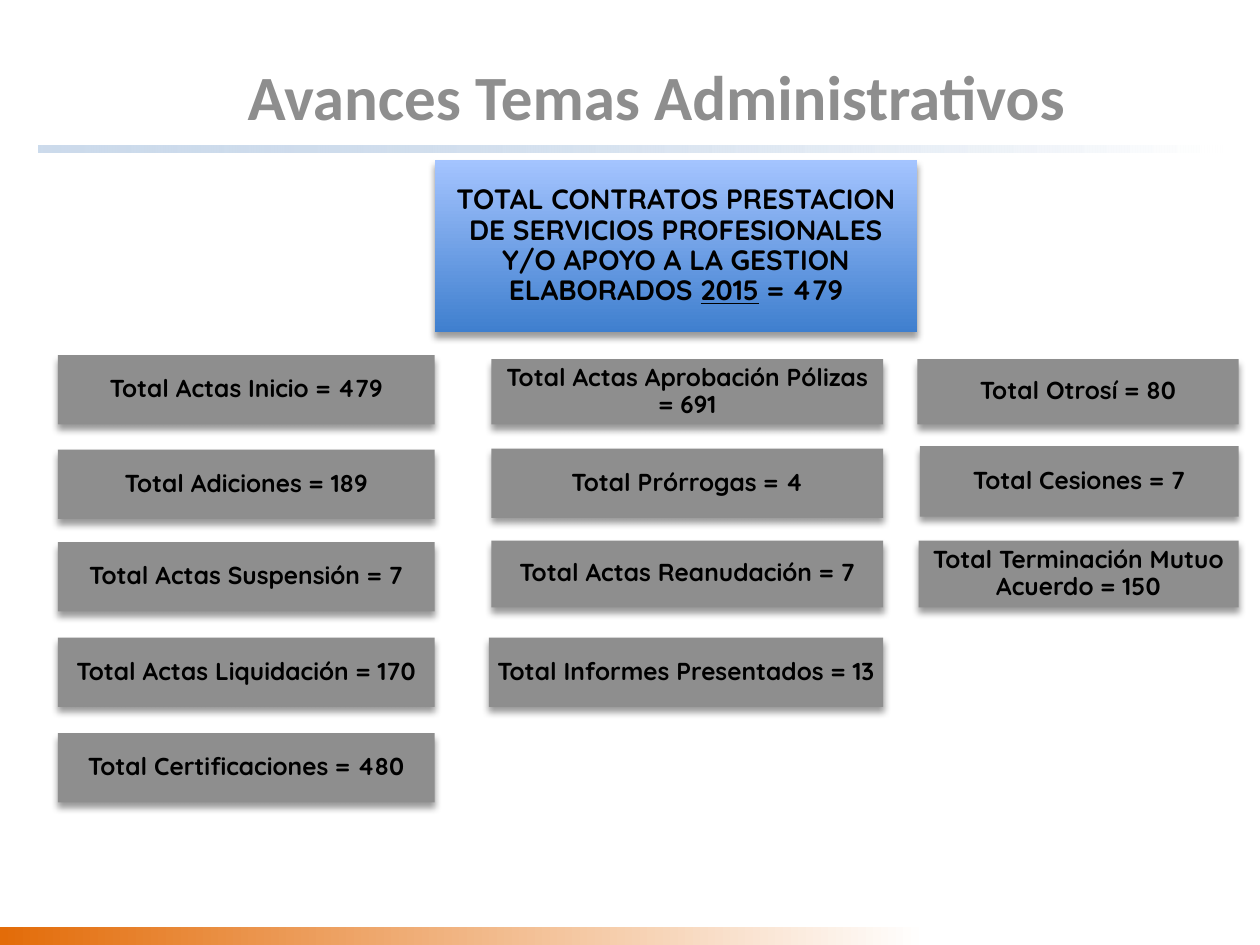
import pptx
import pptx.dml.color
import pptx.enum.shapes
import pptx.enum.text
import pptx.oxml
import pptx.oxml.ns
import pptx.util

Pt = pptx.util.Pt
RGB = pptx.dml.color.RGBColor.from_string

COLORS = {
    "title": "8E8E8E",
    "box": "8E8E8E",
    "text": "000000",
    "total_bottom": "3F7FCE",
    "total_top": "A4C4FF",
    "rule": "9AB7D9",
    "footer": "E36C09",
    "fade": "FFFFFF",
}

# Each column: right edge, then (label, left, top, height) for its boxes
COLUMNS = [
    (248.4, [
        ("Total Actas Inicio = 479", 33.1, 203, 39.6),
        ("Total Adiciones = 189", 33.1, 257, 39.6),
        ("Total Actas Suspensión = 7", 33.1, 309.8, 39.6),
        ("Total Actas Liquidación = 170", 33.1, 364.3, 39.6),
        ("Total Certificaciones = 480", 33.1, 419, 39.6),
    ]),
    (504.7, [
        ("Total Actas Aprobación Pólizas = 691", 280.8, 205.2, 37.4),
        ("Total Prórrogas = 4", 280.8, 256.3, 39.6),
        ("Total Actas Reanudación = 7", 280.8, 308.9, 38.2),
        ("Total Informes Presentados = 13", 279.4, 364.3, 39.6),
    ]),
    (707.8, [
        ("Total Otrosí = 80", 524.2, 205.2, 37.4),
        ("Total Cesiones = 7", 525.6, 254.9, 40.3),
        ("Total Terminación Mutuo Acuerdo = 150", 524.9, 308.9, 38.2),
    ]),
]


def add_rect(slide, left, top, width, height):
    rect = slide.shapes.add_shape(
        pptx.enum.shapes.MSO_SHAPE.RECTANGLE, Pt(left), Pt(top), Pt(width), Pt(height))
    rect.shadow.inherit = False
    rect.line.fill.background()
    return rect


def fill_gradient(rect, start, end, angle=0, start_alpha=None):
    rect.fill.gradient()
    rect.fill.gradient_angle = angle
    for stop, color in zip(rect.fill.gradient_stops, (start, end)):
        stop.color.rgb = RGB(COLORS[color])
    if start_alpha is not None:
        first_color = rect._element.spPr.find(".//" + pptx.oxml.ns.qn("a:srgbClr"))
        alpha = pptx.oxml.parse_xml(
            f'<a:alpha {pptx.oxml.ns.nsdecls("a")} val="{start_alpha * 1000}"/>')
        first_color.append(alpha)


def add_shadow(rect):
    effects = rect._element.spPr.find(pptx.oxml.ns.qn("a:effectLst"))
    effects.append(pptx.oxml.parse_xml(
        f'<a:outerShdw {pptx.oxml.ns.nsdecls("a")} blurRad="{Pt(4)}" dist="{Pt(3)}" '
        'dir="5400000" rotWithShape="0"><a:srgbClr val="000000">'
        '<a:alpha val="40000"/></a:srgbClr></a:outerShdw>'))


def write(paragraph, text, *, size, color="text", font="Quicksand", underline=None):
    paragraph.alignment = pptx.enum.text.PP_ALIGN.CENTER
    run = paragraph.add_run()
    run.text = text
    run.font.name = font
    run.font.size = Pt(size)
    run.font.bold = True
    run.font.underline = underline
    run.font.color.rgb = RGB(COLORS[color])


def add_box(slide, left, top, width, height):
    """Add a shadowed box and return it with its paragraph."""
    box = add_rect(slide, left, top, width, height)
    add_shadow(box)
    frame = box.text_frame
    frame.word_wrap = True
    frame.vertical_anchor = pptx.enum.text.MSO_ANCHOR.MIDDLE
    frame.margin_left = frame.margin_right = Pt(3.6)
    frame.margin_top = frame.margin_bottom = Pt(2.2)
    paragraph = frame.paragraphs[0]
    paragraph.line_spacing = 0.9
    return box, paragraph


def add_title(slide, text):
    title = slide.shapes.title
    title.left, title.top, title.width, title.height = (
        Pt(103), Pt(29.5), Pt(544.3), Pt(94.3))
    title.text_frame.vertical_anchor = pptx.enum.text.MSO_ANCHOR.TOP
    title.text_frame.word_wrap = True
    write(title.text_frame.paragraphs[0], text, size=36, color="title", font="Calibri")


def main():
    deck = pptx.Presentation()
    deck.slide_width, deck.slide_height = Pt(720), Pt(540)
    slide = deck.slides.add_slide(deck.slide_layouts[5])

    # Title with its rule, and the footer band
    add_title(slide, "Avances Temas Administrativos")
    title_rule = add_rect(slide, 22.3, 83.3, 676, 4)
    fill_gradient(title_rule, "rule", "fade", start_alpha=50)
    footer_band = add_rect(slide, 0, 529.5, 529.2, 10.5)
    fill_gradient(footer_band, "footer", "fade")

    # Overall total
    total_box, total = add_box(slide, 248.4, 91.4, 275.8, 98.6)
    fill_gradient(total_box, "total_bottom", "total_top", angle=90)
    write(total, "TOTAL CONTRATOS PRESTACION DE SERVICIOS PROFESIONALES "
                 "Y/O APOYO A LA GESTION ELABORADOS ", size=16)
    write(total, "2015", size=16, underline=True)
    write(total, " = 479", size=16)

    # Counts by kind of document
    for right, counts in COLUMNS:
        for label, left, top, height in counts:
            count_box, count = add_box(slide, left, top, right - left, height)
            count_box.fill.solid()
            count_box.fill.fore_color.rgb = RGB(COLORS["box"])
            write(count, label, size=14)

    deck.save("out.pptx")


if __name__ == "__main__":
    main()
